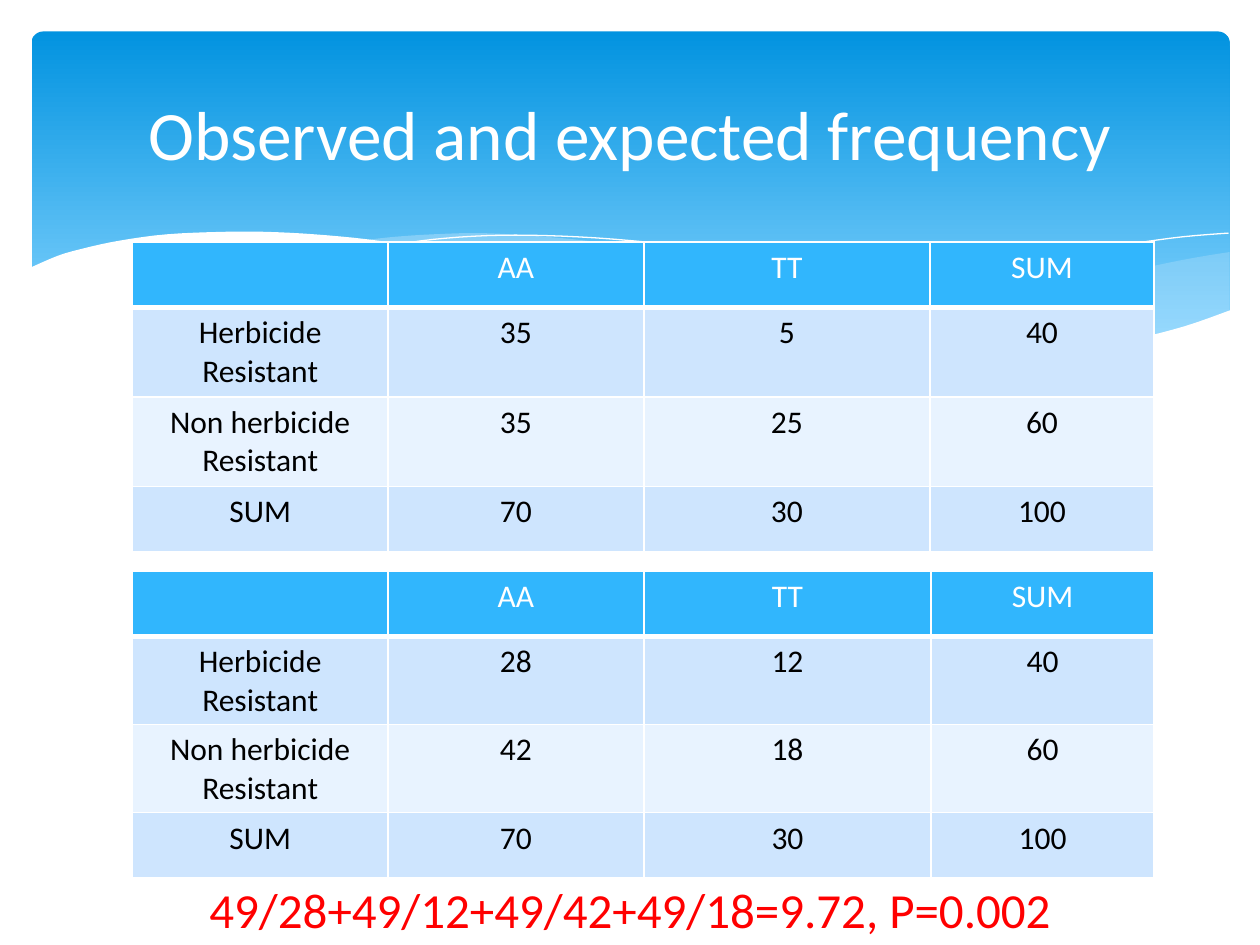
from lxml import etree
from pptx import Presentation
from pptx import util as u
from pptx.dml.color import RGBColor
from pptx.enum import shapes, text
from pptx.oxml.ns import qn

FONT = "Calibri"
COLORS = {
    "white": "FFFFFF", "black": "000000", "red": "FF0000",
    "banner_top": "0293E0", "banner_bottom": "83D3FE", "wave": "C6E7FC",
    "header": "31B6FD", "band_dark": "CEE5FE", "band_light": "E8F3FF",
}

# Curves of the header, in inches from the corner of its box
RIGHT_TOP = [(9.76, 2), (9.35, 2.07), (8.61, 2.23), (7.79, 2.42), (7.06, 2.57), (6.61, 2.65)]
RIGHT_BOTTOM = [(6.61, 2.65), (7.05, 2.71), (7.57, 2.76), (8.03, 2.78), (8.54, 2.76),
                (9.05, 2.69), (9.49, 2.57), (9.76, 2.47)]
MIDDLE_TOP = [(8.93, 2.73), (8.37, 2.65), (7.75, 2.54), (7.06, 2.4), (6.29, 2.22),
              (5.69, 2.08), (5.14, 1.98), (4.65, 1.91), (4.2, 1.87), (3.8, 1.85),
              (3.44, 1.86), (3.13, 1.88), (2.86, 1.91)]
MIDDLE_BOTTOM = [(2.86, 1.91), (3.42, 1.99), (4.04, 2.11), (4.49, 2.22), (5.3, 2.4),
                 (6.01, 2.55), (6.65, 2.66), (7.22, 2.74), (7.73, 2.77), (8.18, 2.78),
                 (8.57, 2.77), (8.93, 2.73)]
LONG_LINE = [(3.09, 1.95), (3.44, 1.9), (3.87, 1.87), (4.33, 1.87), (4.89, 1.9),
             (5.56, 1.97), (6.36, 2.08), (7.27, 2.26), (8.31, 2.51), (9.07, 2.72)]
SHORT_LINE = [(6.13, 2.57), (6.72, 2.41), (7.48, 2.23), (8.36, 2.04), (8.95, 1.94),
              (9.38, 1.88), (9.75, 1.85)]
PAGE_EDGE = [(9.77, 2.46), (9.4, 2.59), (8.99, 2.69), (8.5, 2.75), (8.09, 2.77),
             (7.61, 2.75), (7.08, 2.7), (6.48, 2.62), (5.79, 2.5), (5.03, 2.33),
             (4.47, 2.2), (3.91, 2.07), (3.4, 1.97), (2.92, 1.9), (2.5, 1.86),
             (2.11, 1.84), (1.77, 1.84), (1.32, 1.86), (0.95, 1.91), (0.67, 1.97),
             (0.46, 2.03), (0.23, 2.13)]
PAGE_BOTTOM = [(0.23, 3.29), (9.77, 3.29)]


def rgb(name):
    return RGBColor.from_string(COLORS[name])


def smooth(points, steps=4):
    """Catmull-Rom curve through the points."""
    padded = [points[0], *points, points[-1]]
    curve = [points[0]]
    for a, b, c, d in zip(padded, padded[1:], padded[2:], padded[3:]):
        for i in range(1, steps + 1):
            t = i / steps
            curve.append(tuple(
                (2 * q + (r - p) * t + (2 * p - 5 * q + 4 * r - s) * t ** 2
                 + (3 * q - p - 3 * r + s) * t ** 3) / 2
                for p, q, r, s in zip(a, b, c, d)))
    return curve


def add_outline(s, left, top, points, closed=True):
    emu = [(u.Inches(left + x), u.Inches(top + y)) for x, y in points]
    builder = s.shapes.build_freeform(*emu[0])
    builder.add_line_segments(emu[1:], close=closed)
    sp = builder.convert_to_shape()
    sp.shadow.inherit = False
    return sp


def add_filled_wave(s, left, top, points, color, alpha=100):
    sp = add_outline(s, left, top, points)
    sp.fill.solid()
    sp.fill.fore_color.rgb = rgb(color)
    sp.line.fill.background()
    if alpha < 100:
        clr = sp._element.spPr.find(qn("a:solidFill"))[0]
        etree.SubElement(clr, qn("a:alpha")).set("val", str(alpha * 1000))


def add_header(s, left, top):
    """Gradient banner with waves along its lower edge."""
    sp = s.shapes.add_shape(shapes.MSO_SHAPE.ROUNDED_RECTANGLE, u.Inches(left + 0.25),
                            u.Inches(top + 0.25), u.Inches(9.51), u.Inches(2.7))
    sp.adjustments[0] = 0.034
    sp.shadow.inherit = False
    sp.line.fill.background()
    sp.fill.gradient()
    sp.fill.gradient_angle = 270
    stops = (("banner_top", 0), ("banner_bottom", 0.9))
    for stop, (color, position) in zip(sp.fill.gradient_stops, stops):
        stop.color.rgb = rgb(color)
        stop.position = position

    add_filled_wave(s, left, top, smooth(RIGHT_TOP) + smooth(RIGHT_BOTTOM), "wave", 29)
    add_filled_wave(s, left, top, smooth(MIDDLE_TOP) + smooth(MIDDLE_BOTTOM), "wave", 40)
    for points in (LONG_LINE, SHORT_LINE):
        line = add_outline(s, left, top, smooth(points), closed=False)
        line.fill.background()
        line.line.color.rgb = rgb("white")
        line.line.width = u.Pt(0)
    add_filled_wave(s, left, top, smooth(PAGE_EDGE) + PAGE_BOTTOM, "white")


def add_text(s, left, top, width, height, words, size, color, anchor):
    box = s.shapes.add_textbox(*map(u.Inches, (left, top, width, height)))
    tf = box.text_frame
    tf.word_wrap = True
    tf.vertical_anchor = anchor
    tf.text = words
    style_paragraph(tf.paragraphs[0], size, color)


def style_paragraph(p, size, color):
    p.alignment = text.PP_ALIGN.CENTER
    p.font.name = FONT
    p.font.size = u.Pt(size)
    p.font.bold = False
    p.font.color.rgb = rgb(color)


def set_borders(cell, widths):
    tcPr = cell._tc.get_or_add_tcPr()
    for i, (side, width) in enumerate(widths.items()):
        ln = etree.Element(qn(f"a:ln{side}"), w=str(u.Pt(width)))
        fill = etree.SubElement(ln, qn("a:solidFill"))
        etree.SubElement(fill, qn("a:srgbClr"), val=COLORS["white"])
        tcPr.insert(i, ln)


def add_frequency_table(s, left, top, width, height, col_widths, counts):
    labels = ("Herbicide Resistant", "Non herbicide\nResistant", "SUM")
    rows = [("", "AA", "TT", "SUM")]
    rows += [(label, *map(str, values)) for label, values in zip(labels, counts)]
    frame = s.shapes.add_table(len(rows), len(col_widths),
                               *map(u.Inches, (left, top, width, height)))
    table = frame.table
    for column, col_width in zip(table.columns, col_widths):
        column.width = u.Inches(col_width)
    for i, row in enumerate(rows):
        table.rows[i].height = u.Inches(0.52)
        fill = "header" if i == 0 else "band_dark" if i % 2 else "band_light"
        for j, words in enumerate(row):
            cell = table.cell(i, j)
            cell.text = words
            cell.fill.solid()
            cell.fill.fore_color.rgb = rgb(fill)
            if i == 0:
                set_borders(cell, {"L": 1, "R": 1, "T": 1, "B": 3})
            for p in cell.text_frame.paragraphs:
                style_paragraph(p, 18, "black" if i else "white")
    frame.height = u.Inches(height)


def main():
    prs = Presentation()
    prs.slide_width, prs.slide_height = u.Inches(10), u.Inches(7.5)
    s = prs.slides.add_slide(prs.slide_layouts[6])
    add_header(s, 0, 0)
    add_frequency_table(s, 1.05, 1.92, 8.1, 2.44, (2.03, 2.03, 2.27, 1.78),
                        ((35, 5, 40), (35, 25, 60), (70, 30, 100)))
    add_text(s, 0.5, 0.37, 9, 1.37, "Observed and expected frequency", 39.6, "white",
             text.MSO_ANCHOR.MIDDLE)
    add_frequency_table(s, 1.05, 4.53, 8.1, 2.44, (2.03, 2.03, 2.28, 1.77),
                        ((28, 12, 40), (42, 18, 60), (70, 30, 100)))
    add_text(s, 1.56, 6.93, 6.88, 0.57, "49/28+49/12+49/42+49/18=9.72, P=0.002", 28, "red",
             text.MSO_ANCHOR.TOP)
    prs.save("out.pptx")


if __name__ == "__main__":
    main()
